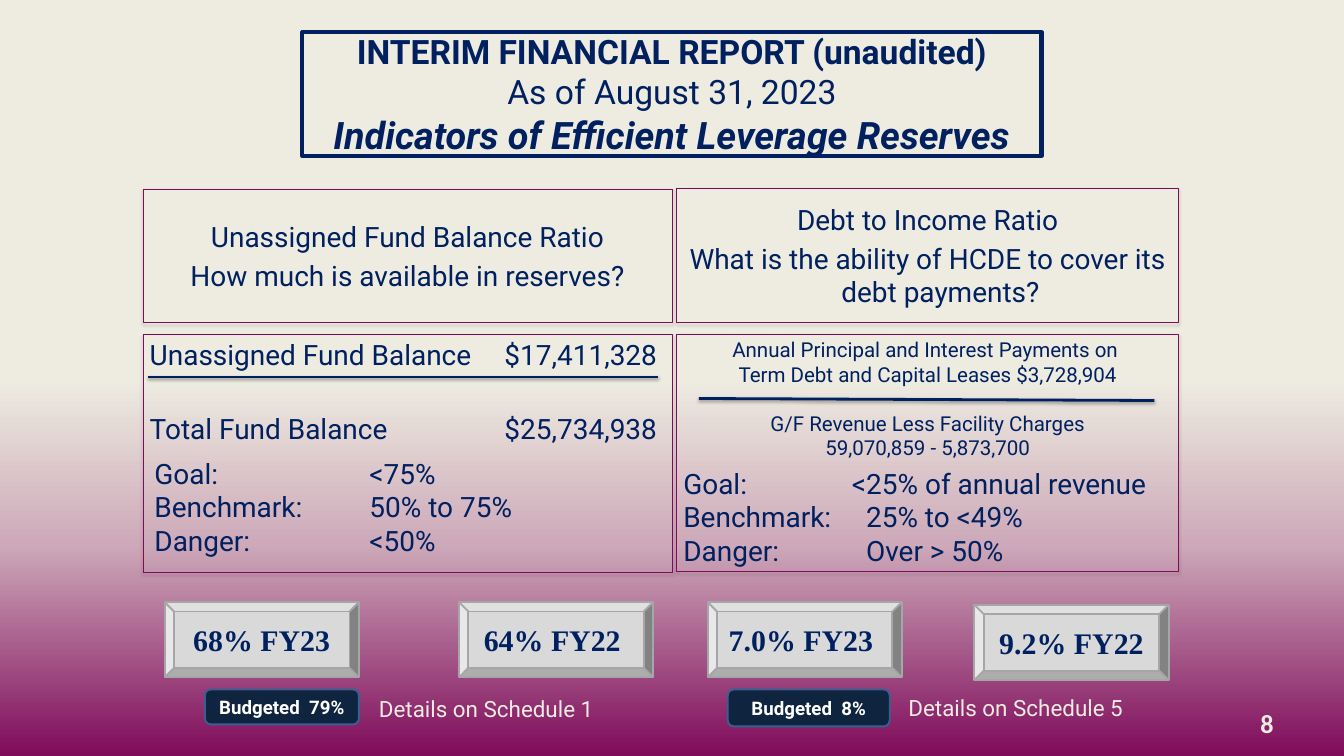
from lxml.etree import SubElement
from pptx import Presentation
from pptx.dml.color import RGBColor
from pptx.enum.shapes import MSO_CONNECTOR, MSO_SHAPE
from pptx.enum.text import MSO_ANCHOR, PP_ALIGN
from pptx.oxml.ns import qn
from pptx.util import Inches, Pt

COLORS = {
    "navy": "002060", "cream": "EEECE1", "rose": "CDA9B9", "plum": "7F0B5B",
    "silver": "D9D9D9", "gray": "A6A6A6", "ink": "0F243E", "blue": "376092",
    "white": "FFFFFF", "black": "000000",
}


def rgb(name):
    """Return the named colour."""
    return RGBColor.from_string(COLORS[name])


def add_shadow(sp):
    """Give a shape or connector a soft shadow below it."""
    effects = SubElement(sp._element.spPr, qn("a:effectLst"))
    shadow = SubElement(effects, qn("a:outerShdw"), blurRad=str(Pt(3.1)),
                        dist=str(Pt(1.8)), dir="5400000", rotWithShape="0")
    color = SubElement(shadow, qn("a:srgbClr"), val=COLORS["black"])
    SubElement(color, qn("a:alpha"), val="35000")


def add_tab(p, pos, align="l"):
    """Set one tab stop on a paragraph."""
    tabs = SubElement(p._p.get_or_add_pPr(), qn("a:tabLst"))
    SubElement(tabs, qn("a:tab"), pos=str(Inches(pos)), algn=align)


def write(sp, lines, size, color="navy", font="Roboto", bold=False,
          align=PP_ALIGN.CENTER, anchor=MSO_ANCHOR.MIDDLE):
    """Fill a shape with equally formatted lines and return its paragraphs."""
    tf = sp.text_frame
    tf.word_wrap = True
    tf.vertical_anchor = anchor
    tf.text = "\n".join(lines)
    for p in tf.paragraphs:
        p.alignment = align
        for r in p.runs:
            r.font.size, r.font.name, r.font.bold = Pt(size), font, bold
            r.font.color.rgb = rgb(color)
    return tf.paragraphs


def add_box(s, kind, box, line, width, fill=None):
    """Add an outlined shape, filled if a colour is given."""
    sp = s.shapes.add_shape(kind, *map(Inches, box))
    if fill:
        sp.fill.solid()
        sp.fill.fore_color.rgb = rgb(fill)
    else:
        sp.fill.background()
    sp.line.color.rgb = rgb(line)
    sp.line.width = Pt(width)
    sp.shadow.inherit = False
    return sp


def add_text(s, box, lines, size, color="navy", **style):
    """Add a left-aligned text box and return its paragraphs."""
    tb = s.shapes.add_textbox(*map(Inches, box))
    return write(tb, lines, size, color, **{
        "align": PP_ALIGN.LEFT, "anchor": MSO_ANCHOR.TOP, **style})


def add_panel(s, box):
    """Add a panel that shows the slide background."""
    sp = s.shapes.add_shape(MSO_SHAPE.RECTANGLE, *map(Inches, box))
    sp.fill.background()
    sp.line.color.rgb = rgb("plum")
    sp.line.width = Pt(0.75)
    sp._element.set("useBgFill", "1")
    add_shadow(sp)
    return sp


def add_rule(s, x1, y1, x2, y2):
    """Add a fraction bar."""
    cn = s.shapes.add_connector(MSO_CONNECTOR.STRAIGHT,
                                *map(Inches, (x1, y1, x2, y2)))
    cn.line.color.rgb = rgb("navy")
    cn.line.width = Pt(3)
    add_shadow(cn)


def add_background(s):
    """Paint the cream to plum gradient."""
    fill = s.background.fill
    fill.gradient()
    fill.gradient_angle = 270
    stops = s._element.find(".//" + qn("a:gsLst"))
    for stop in list(stops):
        stops.remove(stop)
    for pos, name in ((50, "cream"), (72, "rose"), (100, "plum")):
        stop = SubElement(stops, qn("a:gs"), pos=str(pos * 1000))
        SubElement(stop, qn("a:srgbClr"), val=COLORS[name])


def add_title(s, box):
    """Add the framed three-line title."""
    sp = add_box(s, MSO_SHAPE.RECTANGLE, box, "navy", 4.5)
    tf = sp.text_frame
    tf.margin_left = tf.margin_right = tf.margin_top = tf.margin_bottom = 0
    first, _, last = write(sp, [
        "INTERIM FINANCIAL REPORT (unaudited)", "As of August 31, 2023",
        "Indicators of Efficient Leverage Reserves"], 36)
    first.runs[0].font.bold = True
    font = last.runs[0].font
    font.size, font.bold, font.italic = Pt(40.5), True, True


def add_question(s, box, lines):
    """Add a panel naming a ratio and its question."""
    for p in write(add_panel(s, box), lines, 30):
        p.space_before = Pt(6)
        pPr = p._p.get_or_add_pPr()
        pPr.set("marL", str(Inches(0.38)))
        pPr.set("indent", str(Inches(-0.38)))


def add_fund_ratio(s, box):
    """Add the fund balance fraction panel."""
    ps = write(add_panel(s, box), [
        "Unassigned Fund Balance\t$17,411,328",
        "Total Fund Balance\t$25,734,938"], 30,
        align=PP_ALIGN.LEFT, anchor=MSO_ANCHOR.TOP)
    ps[1].space_before = Pt(43)
    for p in ps:
        add_tab(p, 7.55, "r")
    x, y = box[:2]
    add_rule(s, x + 0.07, y + 0.63, x + 7.66, y + 0.63)


def add_debt_ratio(s, box):
    """Add the debt to income fraction panel."""
    ps = write(add_panel(s, box), [
        "Annual Principal and Interest Payments on ",
        "Term Debt and Capital Leases $3,728,904",
        "G/F Revenue Less Facility Charges",
        "59,070,859 - 5,873,700"], 22, anchor=MSO_ANCHOR.TOP)
    ps[2].space_before = Pt(26)
    x, y = box[:2]
    add_rule(s, x + 0.33, y + 0.96, x + 7.11, y + 0.99)


def add_targets(s, box, values, tabs):
    """List goal, benchmark and danger levels."""
    labels = ("Goal:", "Benchmark:", "Danger:")
    lines = [f"{label}\t{value}" for label, value in zip(labels, values)]
    for p, tab in zip(add_text(s, box, lines, 30), tabs):
        add_tab(p, tab)


def add_result(s, box, text):
    """Add a bevelled plate with a yearly result."""
    sp = add_box(s, MSO_SHAPE.BEVEL, box, "gray", 2, "silver")
    write(sp, [text], 32, font="Times New Roman", bold=True)


def add_budget(s, box, text):
    """Add a rounded badge with the budgeted level."""
    sp = add_box(s, MSO_SHAPE.ROUNDED_RECTANGLE, box, "blue", 2, "ink")
    write(sp, [text], 20, "white", bold=True)


def main():
    """Build the slide and save it."""
    prs = Presentation()
    prs.slide_width, prs.slide_height = Inches(20), Inches(11.25)
    s = prs.slides.add_slide(prs.slide_layouts[6])
    add_background(s)
    add_title(s, (4.5, 0.48, 11, 1.84))
    add_question(s, (2.13, 2.82, 7.87, 1.98), [
        "Unassigned Fund Balance Ratio", "How much is available in reserves?"])
    add_question(s, (10.07, 2.8, 7.47, 2), [
        "Debt to Income Ratio",
        "What is the ability of HCDE to cover its debt payments?"])
    add_fund_ratio(s, (2.13, 4.98, 7.87, 3.54))
    add_debt_ratio(s, (10.07, 4.97, 7.47, 3.54))
    add_targets(s, (2.2, 6.74, 7.87, 1.62),
                ("<75%", "50% to 75%", "<50%"), (3.2, 3.2, 3.2))
    add_targets(s, (10.07, 6.89, 7.5, 1.62),
                ("<25% of annual revenue", "25% to <49%", "Over > 50%"),
                (2.51, 2.72, 2.72))
    for x, y, text in ((2.45, 8.96, "68% FY23"), (6.83, 8.96, "64% FY22 "),
                       (10.53, 8.96, "7.0% FY23 "), (14.5, 9, "9.2% FY22")):
        add_result(s, (x, y, 2.89, 1.12), text)
    add_budget(s, (3.05, 10.26, 2.29, 0.52), "Budgeted  79%")
    add_budget(s, (10.83, 10.26, 2.41, 0.55), "Budgeted  8%")
    add_text(s, (5.54, 10.3, 3.48, 0.5), ["Details on Schedule 1"], 24, "cream")
    add_text(s, (13.42, 10.28, 3.83, 0.5), ["Details on Schedule 5"], 24, "cream")
    add_text(s, (18.43, 10.47, 0.62, 0.57), ["8"], 28, "cream",
             font="Calibri", bold=True, align=PP_ALIGN.RIGHT)
    prs.save("out.pptx")


if __name__ == "__main__":
    main()
